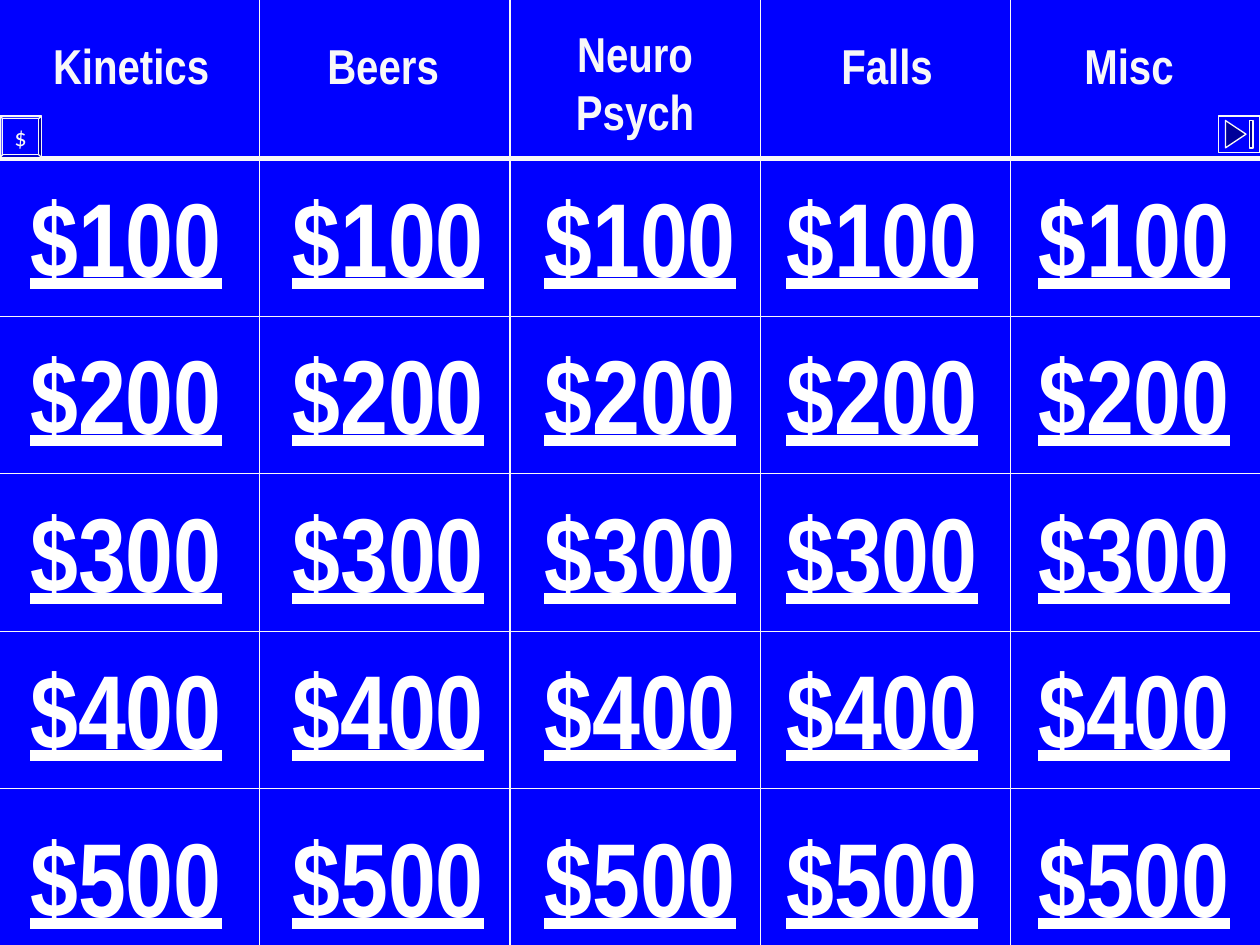
from lxml import etree
from pptx import Presentation
from pptx.dml.color import RGBColor
from pptx.enum.shapes import MSO_CONNECTOR, MSO_SHAPE
from pptx.enum.text import MSO_ANCHOR, MSO_AUTO_SIZE, PP_ALIGN
from pptx.oxml.ns import qn
from pptx.util import Inches, Pt

STRAIGHT = MSO_CONNECTOR.STRAIGHT
END_BUTTON, BEVEL = MSO_SHAPE.ACTION_BUTTON_END, MSO_SHAPE.BEVEL
TOP, MIDDLE = MSO_ANCHOR.TOP, MSO_ANCHOR.MIDDLE
FIT_SHAPE, CENTER = MSO_AUTO_SIZE.SHAPE_TO_FIT_TEXT, PP_ALIGN.CENTER

COLORS = {"board": "0000FF", "line": "F8F8F8", "amount": "FFFFFF"}
FONT = "Arial Narrow"
WIDTH, HEIGHT = 10, 7.5
COLUMNS, ROWS = 5, 6
ROW = HEIGHT / ROWS
RULE_LEFT, RULE_GAP = 2.06, 1.987  # first column rule, then equal steps
CATEGORIES = ["Kinetics", "Beers", "Neuro Psych", "Falls", "Misc"]
CATEGORY_LEFTS = [0, 2, 4, 6, 7.92]
AMOUNT_LEFTS = [0, 2.08, 4.08, 6, 8]


def color(name):
    return RGBColor.from_string(COLORS[name])


def style_paragraph(para, font, size, ink, bold=False, underline=False):
    para.alignment = CENTER
    para.font.name, para.font.size = font, Pt(size)
    para.font.bold, para.font.underline = bold, underline
    para.font.color.rgb = color(ink)


def add_label(page, text, box, anchor, size, ink, underline=False):
    label = page.shapes.add_textbox(*map(Inches, box))
    frame = label.text_frame
    frame.word_wrap = True
    frame.auto_size = FIT_SHAPE
    frame.vertical_anchor = anchor
    frame.text = text
    style_paragraph(frame.paragraphs[0], FONT, size, ink, True, underline)


def add_rule(page, start, end, weight=0.75):
    rule = page.shapes.add_connector(STRAIGHT, *map(Inches, start + end))
    rule.line.color.rgb = color("line")
    rule.line.width = Pt(weight)
    etree.SubElement(rule._element.spPr, qn("a:effectLst"))


def add_grid(page, left, top, width, height):
    for column in range(COLUMNS - 1):
        x = left + RULE_LEFT + column * RULE_GAP
        add_rule(page, (x, top), (x, top + height))
    for row in range(1, ROWS):
        y = top + row * ROW + 0.01
        add_rule(page, (left, y), (left + width, y), 3 if row == 1 else 0.75)


def add_categories(page, top, width):
    for name, left in zip(CATEGORIES, CATEGORY_LEFTS):
        # A two-word name takes two lines
        offset, height = (0.13, 1.04) if " " in name else (0.23, 0.57)
        add_label(page, name, (left, top + offset, width, height), MIDDLE, 28, "line")


def add_amounts(page, top, width, height):
    for row in range(ROWS - 1):
        # The last row sits on the bottom edge
        y = HEIGHT - height if row == ROWS - 2 else top + row * ROW
        for left in AMOUNT_LEFTS:
            add_label(page, f"${(row + 1) * 100}", (left, y, width, height),
                      TOP, 60, "amount", underline=True)


def add_button(page, kind, left, top, width, height):
    button = page.shapes.add_shape(kind, *map(Inches, (left, top, width, height)))
    button.shadow.inherit = False
    button.fill.solid()
    button.fill.fore_color.rgb = color("board")
    button.line.color.rgb = color("line")
    button.line.width = Pt(0.75)
    return button


def add_buttons(page, top, size):
    add_button(page, END_BUTTON, WIDTH - size, top, size, 0.29)
    bevel = add_button(page, BEVEL, 0, top, size, size)
    bevel.adjustments[0] = 0.07
    frame = bevel.text_frame
    frame.word_wrap = False
    frame.vertical_anchor = MIDDLE
    frame.text = "$"
    style_paragraph(frame.paragraphs[0], "Calibri", 14, "line")


def main():
    deck = Presentation()
    deck.slide_width, deck.slide_height = Inches(WIDTH), Inches(HEIGHT)
    page = deck.slides.add_slide(deck.slide_layouts[6])
    page.background.fill.solid()
    page.background.fill.fore_color.rgb = color("board")

    add_grid(page, 0, 0, WIDTH, HEIGHT)
    add_categories(page, 0, 2.08)
    add_amounts(page, ROW + 0.07, 2, 1.1)
    add_buttons(page, 0.92, 0.33)
    deck.save("out.pptx")


if __name__ == "__main__":
    main()
